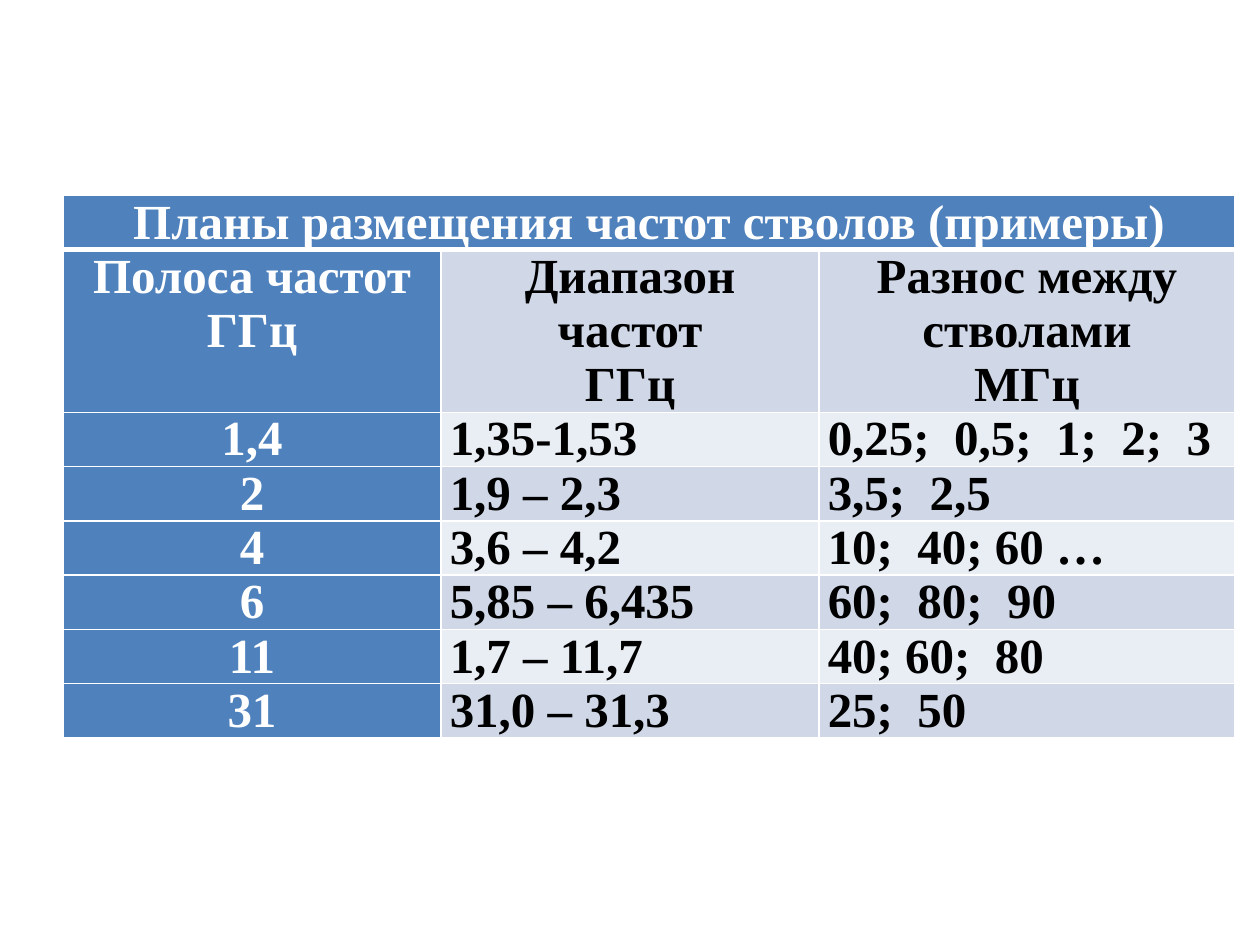
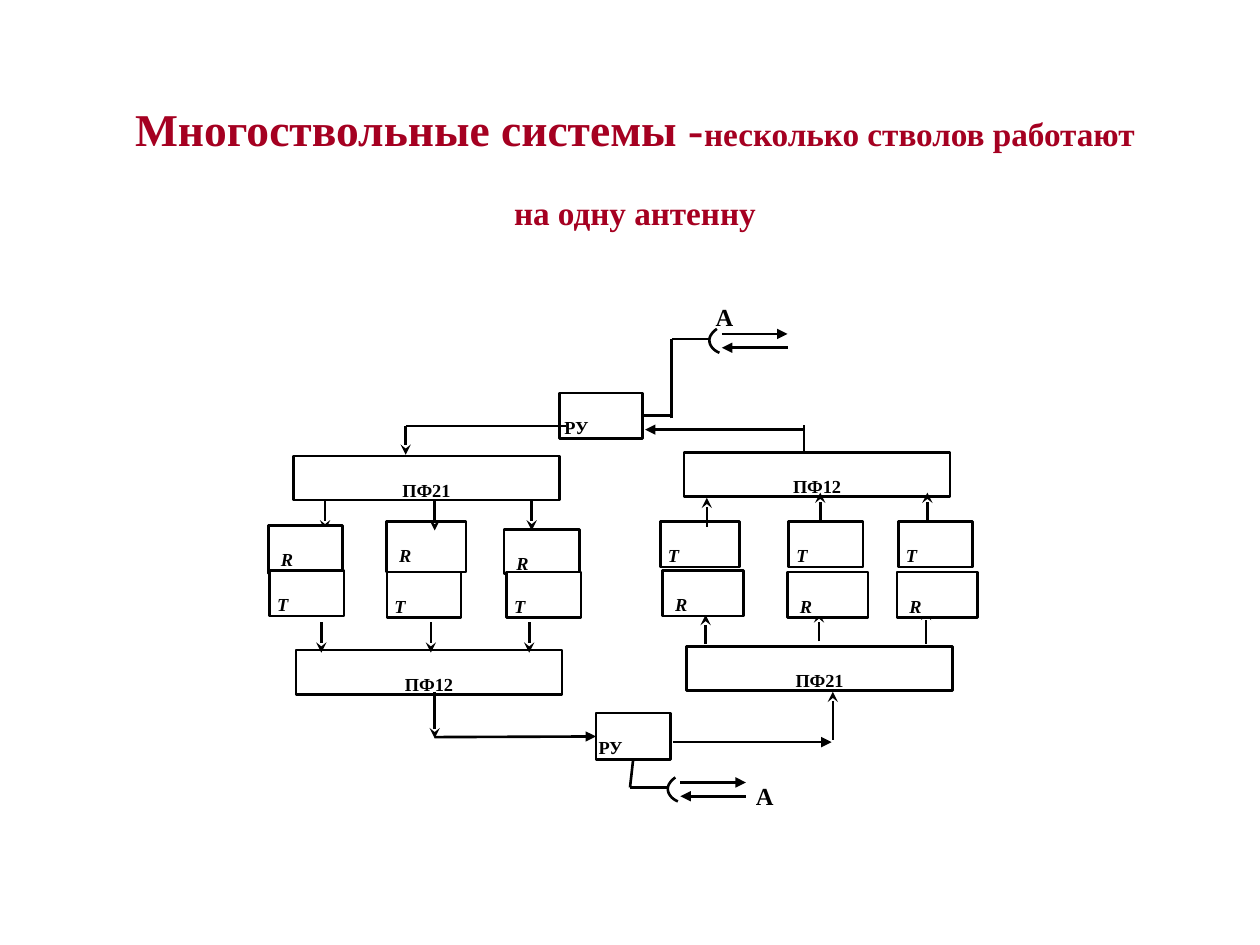
from pptx import Presentation
from pptx.dml.color import RGBColor
from pptx.enum.shapes import MSO_CONNECTOR, MSO_SHAPE
from pptx.enum.text import MSO_ANCHOR, MSO_AUTO_SIZE, PP_ALIGN
from pptx.oxml.ns import qn
from pptx.util import Inches, Pt
from lxml.etree import SubElement

FONT = "Times New Roman"
WHITE = RGBColor(0xFF, 0xFF, 0xFF)
BLACK = RGBColor(0, 0, 0)
CRIMSON = RGBColor(0xA5, 0x00, 0x21)
BLUE = RGBColor(0x4F, 0x81, 0xBD)
BAND_DARK = RGBColor(0xD0, 0xD8, 0xE8)
BAND_LIGHT = RGBColor(0xE9, 0xED, 0xF4)
LINE_WIDTH = Pt(1.5)

COLUMN_WIDTHS = [3, 3, 3.3]
ROW_HEIGHT = 0.43
FREQUENCY_ROWS = [
    ["Планы размещения частот стволов (примеры)", "", ""],
    ["Полоса частот\nГГц", "Диапазон частот\nГГц", "Разнос между стволами\nМГц"],
    ["1,4", "1,35-1,53", "0,25;  0,5;  1;  2;  3"],
    ["2", "1,9 – 2,3", "3,5;  2,5"],
    ["4", "3,6 – 4,2", "10;  40; 60 …"],
    ["6", "5,85 – 6,435", "60;  80;  90"],
    ["11", "1,7 – 11,7", "40; 60;  80"],
    ["31", "31,0 – 31,3", "25;  50"],
]

FILTERS = [("ПФ21", 2.33, 3.62), ("ПФ12", 5.43, 3.59),
           ("ПФ12", 2.35, 5.16), ("ПФ21", 5.45, 5.13)]
RECEIVERS = [(2.13, 4.17, 0.59, 0.38), (3.07, 4.14, 0.63, 0.4), (4, 4.2, 0.6, 0.35),
             (5.26, 4.53, 0.64, 0.36), (6.25, 4.54, 0.64, 0.36), (7.12, 4.54, 0.64, 0.36)]
TRANSMITTERS = [(2.14, 4.53, 0.59, 0.36), (3.07, 4.54, 0.59, 0.36), (4.02, 4.54, 0.59, 0.36),
                (5.24, 4.14, 0.63, 0.36), (6.26, 4.14, 0.59, 0.36), (7.13, 4.14, 0.59, 0.36)]
ARROWS_BEHIND_BOXES = [((2.58, 3.98), (2.58, 4.21)), ((6.5, 5.09), (6.5, 4.86)),
                       ((7.35, 5.11), (7.35, 4.84))]
STEALTH_ARROWS = [
    ((3.45, 3.98), (3.45, 4.21)), ((4.22, 3.98), (4.22, 4.21)),
    ((5.61, 4.18), (5.61, 3.95)), ((6.51, 4.15), (6.51, 3.91)), ((7.36, 4.15), (7.36, 3.91)),
    ((2.55, 4.94), (2.55, 5.18)), ((3.42, 4.94), (3.42, 5.18)), ((4.2, 4.94), (4.2, 5.18)),
    ((5.6, 5.11), (5.6, 4.88)), ((3.22, 3.38), (3.22, 3.61)),
    ((6.61, 5.87), (6.61, 5.49)), ((3.45, 5.49), (3.45, 5.86)),
]
TRIANGLE_ARROWS = [((6.38, 3.41), (5.12, 3.41)), ((5.34, 5.89), (6.6, 5.89))]
PLAIN_LINES = [((5.33, 3.32), (5.33, 2.69)), ((6.38, 3.6), (6.38, 3.37)),
               ((3.22, 3.38), (4.49, 3.38))]
DISH_CURVES = [[(0.06, 0), (0.02, 0.03), (0, 0.06), (0, 0.09)],
               [(0, 0.09), (0, 0.13), (0.03, 0.17), (0.08, 0.19)]]


def add_span(para, text, size, color=BLACK, italic=False):
    span = para.add_run()
    span.text = text
    font = span.font
    font.name, font.size, font.bold, font.italic = FONT, Pt(size), True, italic
    font.color.rgb = color


def set_margins(target, left, top, right, bottom):
    target.margin_left, target.margin_top = Inches(left), Inches(top)
    target.margin_right, target.margin_bottom = Inches(right), Inches(bottom)


def add_cell_borders(cell, top_width, bottom_width):
    properties = cell._tc.get_or_add_tcPr()
    for side, width in zip("LRTB", (1, 1, top_width, bottom_width)):
        border = SubElement(properties, qn(f"a:ln{side}"), w=str(Pt(width)))
        fill = SubElement(border, qn("a:solidFill"))
        SubElement(fill, qn("a:srgbClr"), val=str(WHITE))


def fill_cell(cell, text, row, column):
    is_header = row == 0 or column == 0
    add_cell_borders(cell, 3 if row == 1 else 1, 3 if row == 0 else 1)
    cell.fill.solid()
    cell.fill.fore_color.rgb = BLUE if is_header else BAND_DARK if row % 2 else BAND_LIGHT
    set_margins(cell, 0.07, 0, 0.07, 0)
    frame = cell.text_frame
    for index, line in enumerate(text.split("\n")):
        para = frame.add_paragraph() if index else frame.paragraphs[0]
        para.alignment = PP_ALIGN.CENTER if is_header or row == 1 else PP_ALIGN.JUSTIFY
        if line:
            add_span(para, line, 28, WHITE if is_header else BLACK)


def add_frequency_table(page):
    heights = [ROW_HEIGHT * (3 if row == 1 else 1) for row in range(len(FREQUENCY_ROWS))]
    table = page.shapes.add_table(
        len(heights), len(COLUMN_WIDTHS), Inches(0.5), Inches(1.55),
        Inches(sum(COLUMN_WIDTHS)), Inches(sum(heights))).table
    for column, width in zip(table.columns, COLUMN_WIDTHS):
        column.width = Inches(width)
    for row, height in zip(table.rows, heights):
        row.height = Inches(height)
    table.cell(0, 0).merge(table.cell(0, 2))
    for row, texts in enumerate(FREQUENCY_ROWS):
        for column, text in enumerate(texts):
            fill_cell(table.cell(row, column), text, row, column)


def add_title(page):
    title = page.shapes.title
    title.left, title.top = Inches(0.83), Inches(0.21)
    title.width, title.height = Inches(8.42), Inches(1.83)
    frame = title.text_frame
    frame.word_wrap = True
    frame.auto_size = MSO_AUTO_SIZE.NONE
    frame.vertical_anchor = MSO_ANCHOR.MIDDLE
    set_margins(frame, 0.1, 0.27, 0.1, 0.05)
    para = frame.paragraphs[0]
    para.alignment = PP_ALIGN.CENTER
    para.line_spacing = Pt(44)
    add_span(para, "Многоствольные системы -", 26, CRIMSON)
    add_span(para, "несколько стволов работают на одну антенну", 19, CRIMSON)


def add_box(page, text, place, indent=0, align=PP_ALIGN.LEFT, italic=False):
    box = page.shapes.add_shape(MSO_SHAPE.RECTANGLE, *map(Inches, place))
    box.shadow.inherit = False
    box.fill.solid()
    box.fill.fore_color.rgb = WHITE
    box.line.color.rgb = BLACK
    box.line.width = LINE_WIDTH
    frame = box.text_frame
    frame.vertical_anchor = MSO_ANCHOR.TOP
    set_margins(frame, indent, 0.18, 0, 0)
    para = frame.paragraphs[0]
    para.alignment = align
    add_span(para, text, 10.5, italic=italic)
    return box


def add_line(page, start, end, head=None):
    line = page.shapes.add_connector(MSO_CONNECTOR.STRAIGHT, *map(Inches, start + end))
    line.line.color.rgb = BLACK
    line.line.width = LINE_WIDTH
    if head:
        SubElement(line.line._get_or_add_ln(), qn("a:tailEnd"), type=head)
    SubElement(line._element.spPr, qn("a:effectLst"))
    return line


def add_lines(page, ends, head=None):
    for start, end in ends:
        add_line(page, start, end, head)


def curve_point(controls, t):
    weights = ((1 - t) ** 3, 3 * t * (1 - t) ** 2, 3 * t ** 2 * (1 - t), t ** 3)
    return [sum(w * point[axis] for w, point in zip(weights, controls)) for axis in (0, 1)]


def add_antenna(page, left, top, label_place, label_indent):
    points = [curve_point(curve, step / 8) for curve in DISH_CURVES for step in range(9)]
    points = [(Inches(left + x), Inches(top + y)) for x, y in points]
    builder = page.shapes.build_freeform(*points[0])
    builder.add_line_segments(points[1:], close=False)
    dish = builder.convert_to_shape()
    dish.shadow.inherit = False
    dish.fill.background()
    dish.line.color.rgb = BLACK
    dish.line.width = LINE_WIDTH
    add_line(page, (left - 0.3, top + 0.08), (left, top + 0.08))
    near, far = left + 0.1, left + 0.62
    add_line(page, (near, top + 0.04), (far, top + 0.04), "triangle")
    add_line(page, (far, top + 0.15), (near, top + 0.15), "triangle")
    label = page.shapes.add_textbox(*map(Inches, label_place))
    label.text_frame.word_wrap = True
    set_margins(label.text_frame, label_indent, 0.22, 0, 0)
    add_span(label.text_frame.paragraphs[0], "А", 14)


def add_diagram(page):
    add_lines(page, ARROWS_BEHIND_BOXES, "stealth")
    upper_splitter = add_box(page, "РУ", (4.44, 3.12, 0.66, 0.36), 0.04)
    lower_splitter = add_box(page, "РУ", (4.73, 5.66, 0.59, 0.37), 0.02)
    for name, left, top in FILTERS:
        add_box(page, name, (left, top, 2.11, 0.35), align=PP_ALIGN.CENTER)
    for place in RECEIVERS:
        add_box(page, "R", place, 0.1, italic=True)
    for place in TRANSMITTERS:
        add_box(page, "T", place, 0.06, italic=True)
    add_lines(page, STEALTH_ARROWS, "stealth")
    add_lines(page, TRIANGLE_ARROWS, "triangle")
    add_lines(page, PLAIN_LINES)
    add_line(page, (5.33, 3.3), (5.1, 3.3)).end_connect(upper_splitter, 3)
    add_line(page, (5, 6.25), (5.02, 6.03)).end_connect(lower_splitter, 2)
    add_line(page, (3.45, 5.85), (4.73, 5.85), "triangle").end_connect(lower_splitter, 1)
    add_antenna(page, 5.63, 2.61, (5.68, 2.18, 0.42, 0.36), 0)
    add_antenna(page, 5.3, 6.17, (5.95, 5.98, 0.47, 0.44), 0.05)


def main():
    deck = Presentation()
    deck.slide_width, deck.slide_height = Inches(10), Inches(7.5)
    table_page = deck.slides.add_slide(deck.slide_layouts[6])
    add_frequency_table(table_page)
    diagram_page = deck.slides.add_slide(deck.slide_layouts[5])
    add_title(diagram_page)
    add_diagram(diagram_page)
    deck.save("out.pptx")


if __name__ == "__main__":
    main()
